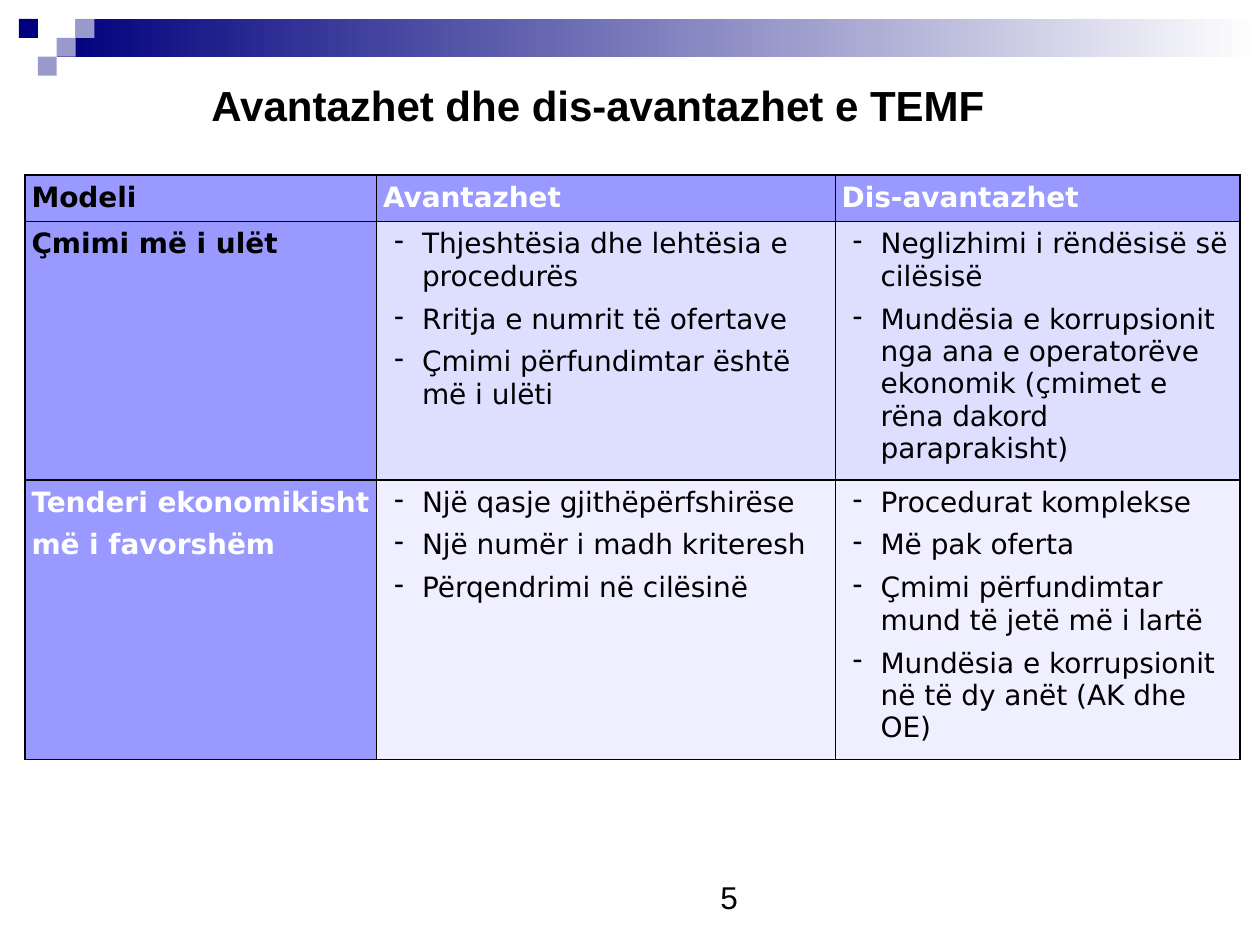
from dataclasses import dataclass
from itertools import product

from pptx import Presentation
from pptx.dml.color import RGBColor as Rgb
from pptx.enum.shapes import MSO_SHAPE as Shape
from pptx.enum.text import MSO_AUTO_SIZE as AutoSize
from pptx.oxml.xmlchemy import OxmlElement as Element
from pptx.util import Inches, Pt


@dataclass(frozen=True)
class Theme:
    navy: str = "00007D"
    lavender: str = "9999CC"
    white: str = "FFFFFF"
    black: str = "000000"
    heading_fill: str = "9999FF"
    row_fills: tuple[str, str] = ("DEDEFF", "EFEFFF")
    text_font: str = "Arial"
    table_font: str = "DejaVu Sans"
    title_size: int = 24
    number_size: int = 18
    table_size: int = 16
    border_width: int = 1


@dataclass(frozen=True)
class Square:
    column: int
    row: int
    color: str


@dataclass(frozen=True)
class Entry:
    lines: tuple[str, ...]
    fill: str
    color: str = "000000"
    heading: bool = False


THEME = Theme()
SQUARE_SIZE = 0.15
SQUARES = [
    Square(3, 1, THEME.white),
    Square(4, 1, THEME.lavender),
    Square(1, 1, THEME.navy),
    Square(3, 2, THEME.lavender),
    Square(2, 3, THEME.lavender),
]
COLUMN_WIDTHS = (2.79, 3.64, 3.21)
ROW_HEIGHTS = (0.37, 2.05, 2.21)


def heading(color: str, *lines: str) -> Entry:
    return Entry(lines, THEME.heading_fill, color, heading=True)


LOW, HIGH = THEME.row_fills
ENTRIES = [
    [
        heading(THEME.black, "Modeli"),
        heading(THEME.white, "Avantazhet"),
        heading(THEME.white, "Dis-avantazhet"),
    ],
    [
        heading(THEME.black, "Çmimi më i ulët"),
        Entry((
            "Thjeshtësia dhe lehtësia e procedurës",
            "Rritja e numrit të ofertave",
            "Çmimi përfundimtar është më i ulëti",
        ), LOW),
        Entry((
            "Neglizhimi i rëndësisë së cilësisë",
            "Mundësia e korrupsionit nga ana e operatorëve ekonomik "
            "(çmimet e rëna dakord paraprakisht)",
        ), LOW),
    ],
    [
        heading(THEME.white, "Tenderi ekonomikisht", "më i favorshëm"),
        Entry((
            "Një qasje gjithëpërfshirëse",
            "Një numër i madh kriteresh",
            "Përqendrimi në cilësinë",
        ), HIGH),
        Entry((
            "Procedurat komplekse",
            "Më pak oferta",
            "Çmimi përfundimtar mund të jetë më i lartë",
            "Mundësia e korrupsionit në të dy anët (AK dhe OE)",
        ), HIGH),
    ],
]


def style_runs(para, font: str, size: int, color: str, bold: bool) -> None:
    for span in para.runs:
        span.font.name = font
        span.font.size = Pt(size)
        span.font.bold = bold
        span.font.color.rgb = Rgb.from_string(color)


def add_block(page, left: float, top: float, width: float, height: float):
    block = page.shapes.add_shape(
        Shape.RECTANGLE, Inches(left), Inches(top), Inches(width), Inches(height))
    block.shadow.inherit = False
    block.line.fill.background()
    return block


def add_banner(page) -> None:
    band = add_block(page, 0.45, 0.15, 9.55, 0.3)
    band.fill.gradient()
    band.fill.gradient_angle = 0
    for stop, color in zip(band.fill.gradient_stops, (THEME.navy, THEME.white)):
        stop.color.rgb = Rgb.from_string(color)
    for stop, position in zip(band.fill.gradient_stops, (0, 1)):
        stop.position = position
    for square in SQUARES:
        block = add_block(page, square.column * SQUARE_SIZE, square.row * SQUARE_SIZE,
                          SQUARE_SIZE, SQUARE_SIZE)
        block.fill.solid()
        block.fill.fore_color.rgb = Rgb.from_string(square.color)


def add_label(page, text: str, left: float, top: float, width: float,
              height: float, size: int, bold: bool = False) -> None:
    box = page.shapes.add_textbox(
        Inches(left), Inches(top), Inches(width), Inches(height))
    frame = box.text_frame
    frame.word_wrap = False
    frame.auto_size = AutoSize.SHAPE_TO_FIT_TEXT
    frame.text = text
    style_runs(frame.paragraphs[0], THEME.text_font, size, THEME.black, bold)


def add_dash(para) -> None:
    """Give the paragraph a hanging dash bullet."""
    properties = para._p.get_or_add_pPr()
    properties.set("marL", str(Inches(0.31)))
    properties.set("indent", str(Inches(-0.22)))
    bullet = Element("a:buChar")
    bullet.set("char", "-")
    properties.append(bullet)


def add_borders(cell) -> None:
    properties = cell._tc.get_or_add_tcPr()
    for index, side in enumerate(("lnL", "lnR", "lnT", "lnB")):
        line = Element(f"a:{side}")
        line.set("w", str(Pt(THEME.border_width)))
        paint = Element("a:solidFill")
        color = Element("a:srgbClr")
        color.set("val", THEME.black)
        paint.append(color)
        line.append(paint)
        properties.insert(index, line)


def fill_cell(cell, entry: Entry) -> None:
    cell.margin_left = cell.margin_right = Inches(0.05)
    cell.margin_top = cell.margin_bottom = Inches(0.05)
    cell.fill.solid()
    cell.fill.fore_color.rgb = Rgb.from_string(entry.fill)
    add_borders(cell)
    cell.text_frame.text = "\n".join(entry.lines)
    for index, para in enumerate(cell.text_frame.paragraphs):
        if not entry.heading:
            add_dash(para)
        para.space_before = Pt(6 if index else 0)
        style_runs(para, THEME.table_font, THEME.table_size, entry.color, entry.heading)


def add_comparison(page) -> None:
    table = page.shapes.add_table(
        len(ROW_HEIGHTS), len(COLUMN_WIDTHS), Inches(0.2), Inches(1.39),
        Inches(sum(COLUMN_WIDTHS)), Inches(sum(ROW_HEIGHTS))).table
    table.first_row = table.horz_banding = False
    for column, width in zip(table.columns, COLUMN_WIDTHS):
        column.width = Inches(width)
    for row, height in zip(table.rows, ROW_HEIGHTS):
        row.height = Inches(height)
    for row, column in product(range(len(ROW_HEIGHTS)), range(len(COLUMN_WIDTHS))):
        fill_cell(table.cell(row, column), ENTRIES[row][column])


def main() -> None:
    deck = Presentation()
    deck.slide_width, deck.slide_height = Inches(10), Inches(7.5)
    page = deck.slides.add_slide(deck.slide_layouts[6])
    add_banner(page)
    add_label(page, "5", 5.62, 6.92, 0.64, 0.4, THEME.number_size)
    add_label(page, "Avantazhet dhe dis-avantazhet e TEMF",
              1.58, 0.58, 6.4, 0.5, THEME.title_size, bold=True)
    add_comparison(page)
    deck.save("out.pptx")


if __name__ == "__main__":
    main()
